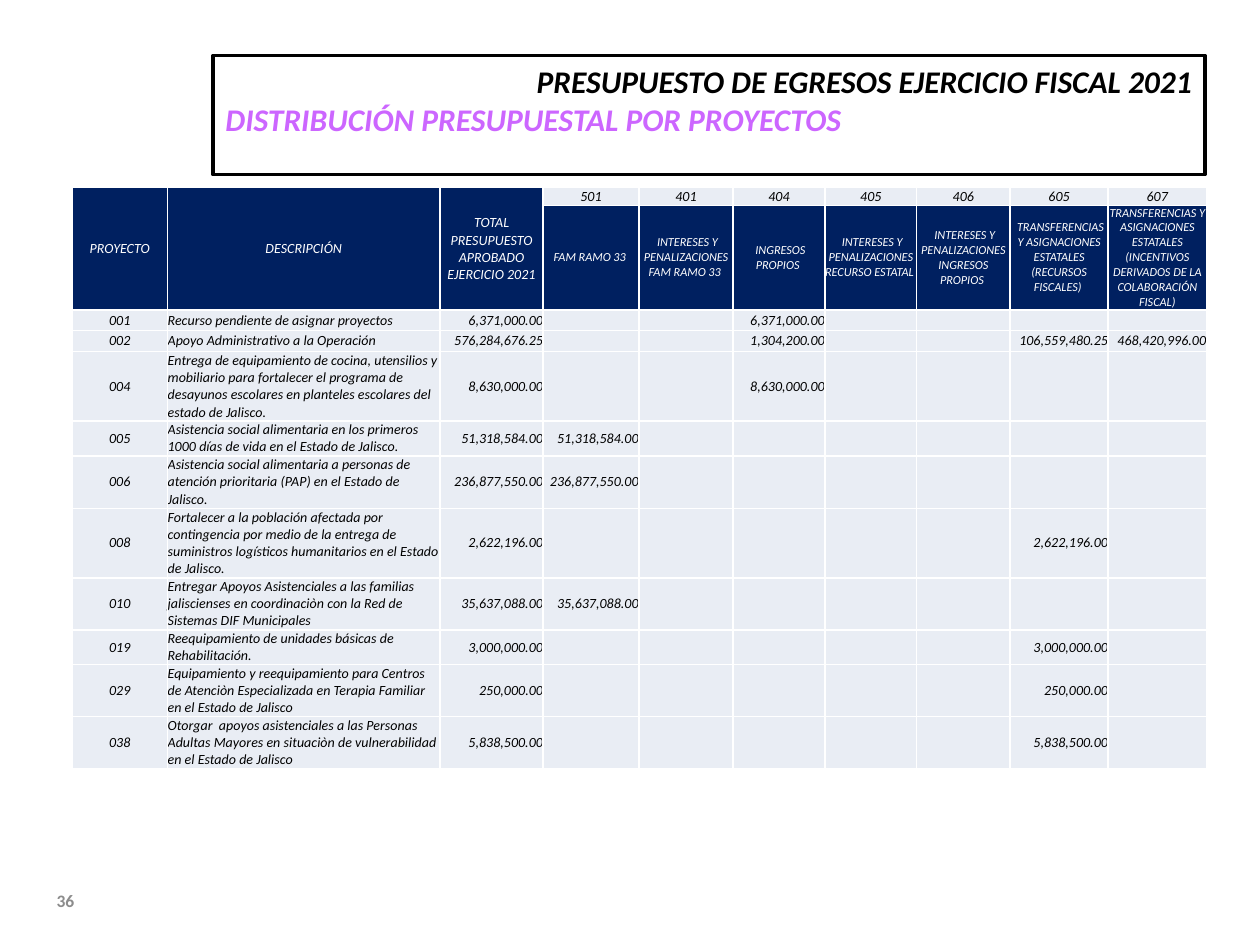
import lxml.etree
import pptx
import pptx.dml.color
import pptx.enum.text
import pptx.oxml.ns
import pptx.util

Cm = pptx.util.Cm
Align = pptx.enum.text.PP_ALIGN
Anchor = pptx.enum.text.MSO_ANCHOR
qn = pptx.oxml.ns.qn

COLORS = {
    "black": "000000", "white": "FFFFFF", "purple": "CC66FF",
    "navy": "002060", "pale": "E9EDF4", "gray": "8C8C8C",
}

# Table content: the total of each project is the sum of its funds
LEAD_HEADERS = ["PROYECTO", "DESCRIPCIÓN", "TOTAL PRESUPUESTO APROBADO EJERCICIO 2021"]
FUNDS = {
    "501": "FAM RAMO 33 ",
    "401": " INTERESES Y PENALIZACIONES FAM RAMO 33 ",
    "404": " INGRESOS PROPIOS ",
    "405": " INTERESES Y PENALIZACIONES RECURSO ESTATAL ",
    "406": " INTERESES Y PENALIZACIONES INGRESOS PROPIOS ",
    "605": " TRANSFERENCIAS Y ASIGNACIONES ESTATALES (RECURSOS FISCALES) ",
    "607": "TRANSFERENCIAS Y ASIGNACIONES ESTATALES "
           "(INCENTIVOS DERIVADOS DE LA COLABORACIÓN FISCAL)",
}
PROJECTS = [
    ("001", "Recurso pendiente de asignar proyectos", {"404": 6371000}),
    ("002", "Apoyo Administrativo a la Operación",
     {"404": 1304200, "605": 106559480.25, "607": 468420996}),
    ("004", "Entrega de equipamiento de cocina, utensilios y mobiliario para fortalecer el "
            "programa de desayunos escolares en planteles escolares del estado de Jalisco.",
     {"404": 8630000}),
    ("005", "Asistencia social alimentaria en los primeros 1000 días de vida en el Estado "
            "de Jalisco.", {"501": 51318584}),
    ("006", "Asistencia social alimentaria a personas de atención prioritaria (PAP) en el "
            "Estado de Jalisco.", {"501": 236877550}),
    ("008", "Fortalecer a la población afectada por contingencia por medio de la entrega de "
            "suministros logísticos humanitarios en el Estado de Jalisco.", {"605": 2622196}),
    ("010", "Entregar Apoyos Asistenciales a las familias jaliscienses en coordinaciòn con "
            "la Red de Sistemas DIF Municipales", {"501": 35637088}),
    ("019", "Reequipamiento de unidades básicas de Rehabilitación.", {"605": 3000000}),
    ("029", "Equipamiento y reequipamiento para Centros de Atenciòn Especializada en Terapia "
            "Familiar en el Estado de Jalisco", {"605": 250000}),
    ("038", "Otorgar  apoyos asistenciales a las Personas Adultas Mayores en situaciòn de "
            "vulnerabilidad en el Estado de Jalisco", {"605": 5838500}),
]
COLUMN_WIDTHS = [1.93, 5.49, 2.08, 1.93, 1.9, 1.85, 1.85, 1.88, 1.98, 1.98]
ROW_HEIGHTS = [0.36, 2.11, 0.41, 0.43, 1.4, 0.7, 1.06, 1.4, 1.05, 0.7, 1.05, 1.05]


def rgb(name):
    return pptx.dml.color.RGBColor.from_string(COLORS[name])


class BudgetSlide:
    font_name = "Calibri"

    def __init__(self, slide):
        self.slide = slide

    def format_paragraph(self, paragraph, size, color, align=Align.LEFT,
                         bold=False, italic=False):
        paragraph.alignment = align
        for run in paragraph.runs:
            run.font.name = self.font_name
            run.font.size = pptx.util.Pt(size)
            run.font.bold = bold
            run.font.italic = italic
            run.font.color.rgb = rgb(color)

    def add_title(self, lines, left, top, width, height):
        title = self.slide.shapes.title
        title.left, title.top, title.width, title.height = map(Cm, (left, top, width, height))
        outline = lxml.etree.Element(qn("a:prstGeom"), prst="roundRect")
        lxml.etree.SubElement(outline, qn("a:avLst"))
        title.element.spPr.insert(1, outline)
        title.line.color.rgb = rgb("black")
        title.line.width = pptx.util.Pt(2)
        frame = title.text_frame
        frame.text = "\n".join(text for text, color, align in lines)
        frame.vertical_anchor = Anchor.TOP
        frame.auto_size = pptx.enum.text.MSO_AUTO_SIZE.NONE
        for paragraph, (text, color, align) in zip(frame.paragraphs, lines):
            self.format_paragraph(paragraph, 18, color, align, bold=True, italic=True)

    def add_page_number(self, text, left, top, width, height):
        box = self.slide.shapes.add_textbox(*map(Cm, (left, top, width, height)))
        frame = box.text_frame
        frame.word_wrap = True
        frame.vertical_anchor = Anchor.MIDDLE
        frame.text = text
        self.format_paragraph(frame.paragraphs[0], 10, "gray", bold=True)

    def add_table(self, left, top, column_widths, row_heights):
        frame = self.slide.shapes.add_table(
            len(row_heights), len(column_widths), Cm(left), Cm(top),
            Cm(sum(column_widths)), Cm(sum(row_heights)))
        table = frame.table
        table.first_row = table.horz_banding = False
        for column, width in zip(table.columns, column_widths):
            column.width = Cm(width)
        for row, height in zip(table.rows, row_heights):
            row.height = Cm(height)
        return table

    def fill_cell(self, cell, text, align=Align.CENTER, size=8, color="black", fill="pale"):
        cell.margin_left = cell.margin_right = cell.margin_top = cell.margin_bottom = 0
        cell.vertical_anchor = Anchor.MIDDLE
        properties = cell._tc.get_or_add_tcPr()
        for side in ("lnL", "lnR", "lnT", "lnB"):
            border = lxml.etree.SubElement(properties, qn(f"a:{side}"), w="12700")
            solid = lxml.etree.SubElement(border, qn("a:solidFill"))
            lxml.etree.SubElement(solid, qn("a:srgbClr"), val=COLORS["white"])
        cell.fill.solid()
        cell.fill.fore_color.rgb = rgb(fill)
        paragraph = cell.text_frame.paragraphs[0]
        if text:
            paragraph.text = text
            self.format_paragraph(paragraph, size, color, align, italic=True)
        else:
            # Small type keeps empty cells from stretching their row
            lxml.etree.SubElement(paragraph._p, qn("a:endParaRPr"), sz=str(size * 100))


def fill_budget_table(budget, table):
    header = {"color": "white", "fill": "navy"}

    # Header rows
    for column, text in enumerate(LEAD_HEADERS):
        budget.fill_cell(table.cell(0, column), text, **header)
        budget.fill_cell(table.cell(1, column), "", **header)
        table.cell(0, column).merge(table.cell(1, column))
    for column, (code, name) in enumerate(FUNDS.items(), len(LEAD_HEADERS)):
        budget.fill_cell(table.cell(0, column), code)
        budget.fill_cell(table.cell(1, column), name, size=7, **header)

    # Project rows
    for row, (code, description, amounts) in enumerate(PROJECTS, 2):
        budget.fill_cell(table.cell(row, 0), code)
        budget.fill_cell(table.cell(row, 1), description, Align.LEFT)
        values = [sum(amounts.values())] + [amounts.get(fund) for fund in FUNDS]
        for column, value in enumerate(values, 2):
            text = f"{value:,.2f}" if value else ""
            budget.fill_cell(table.cell(row, column), text, Align.RIGHT)


def main():
    presentation = pptx.Presentation()
    presentation.slide_width, presentation.slide_height = Cm(25.4), Cm(19.05)
    title_only = presentation.slide_layouts[5]
    budget = BudgetSlide(presentation.slides.add_slide(title_only))

    # Page number and title frame
    budget.add_page_number("36", 0.89, 17.65, 5.92, 1.02)
    budget.add_title([
        ("PRESUPUESTO DE EGRESOS EJERCICIO FISCAL 2021", "black", Align.RIGHT),
        ("DISTRIBUCIÓN PRESUPUESTAL POR PROYECTOS ", "purple", Align.JUSTIFY),
    ], 4.29, 1.12, 20, 2.4)

    # Budget by project and fund
    table = budget.add_table(1.45, 3.78, COLUMN_WIDTHS, ROW_HEIGHTS)
    fill_budget_table(budget, table)

    presentation.save("out.pptx")


if __name__ == "__main__":
    main()
